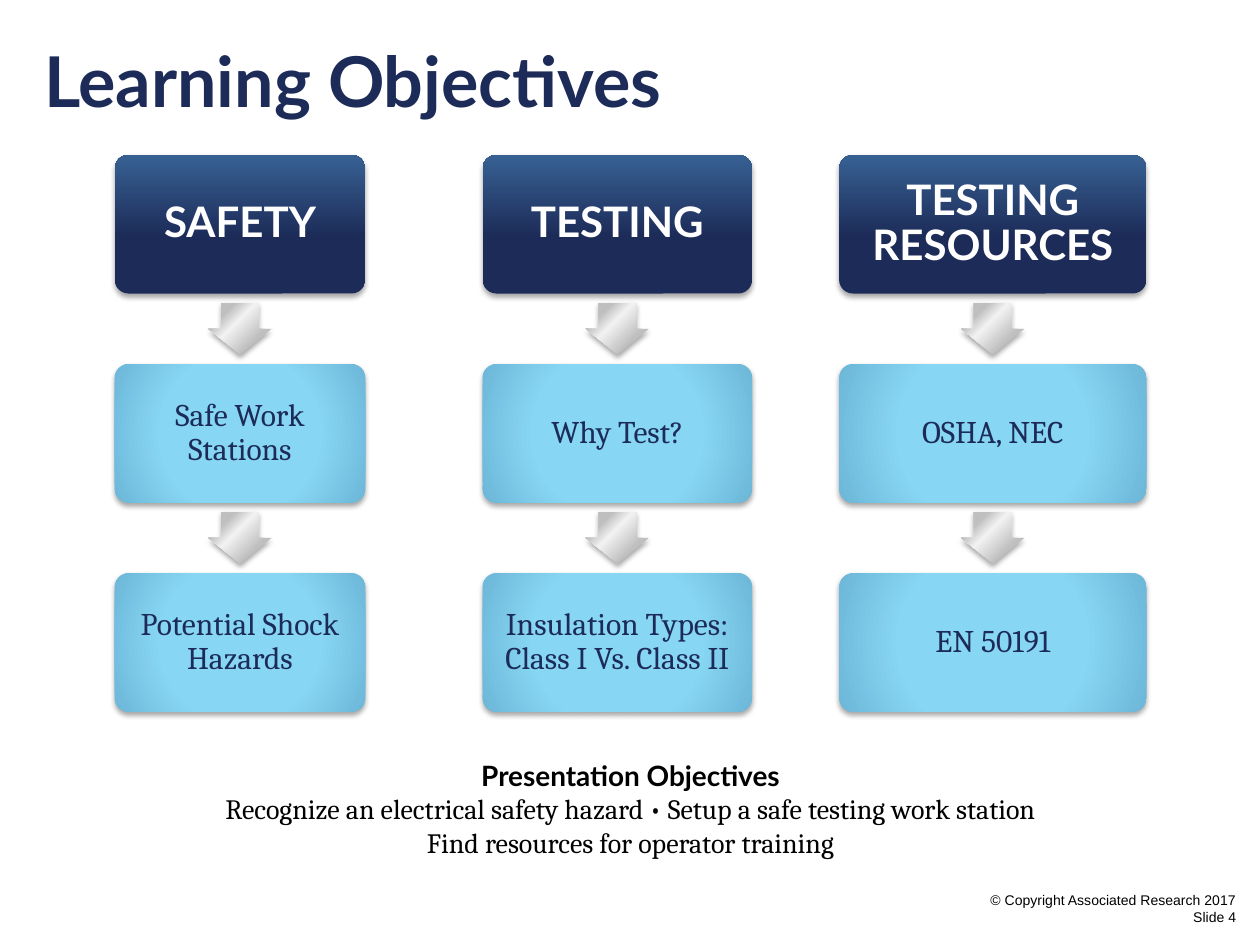
import pptx
import pptx.dml.color
import pptx.enum.shapes
import pptx.enum.text
import pptx.oxml
import pptx.oxml.ns
import pptx.util

Inches = pptx.util.Inches
Pt = pptx.util.Pt
Shape = pptx.enum.shapes.MSO_SHAPE
Align = pptx.enum.text.PP_ALIGN
Anchor = pptx.enum.text.MSO_ANCHOR

NAVY = "1C2B58"
BLACK = "000000"
WHITE = "FFFFFF"

# Gradient stops (percent, colour) and direction
HEADING_STOPS = [(40, NAVY), (99, "376092")]
TOPIC_STOPS = [(55, "87D6F4"), (100, "6CB6D7")]
ARROW_STOPS = [(27, "BFBFBF"), (59, "F2F2F2"), (77, "BFBFBF")]
RADIAL = ('<a:path path="circle"><a:fillToRect l="50000" t="50000" '
          'r="50000" b="50000"/></a:path>')

# Left edge, width and texts of each column, heading first
COLUMNS = [
    (0.91, 1.99, ["SAFETY", "Safe Work Stations", "Potential Shock Hazards"]),
    (3.83, 2.14, ["TESTING", "Why Test?",
                  "Insulation Types:\vClass I Vs. Class II"]),
    (6.66, 2.44, ["TESTING RESOURCES", "OSHA, NEC", "EN 50191"]),
]
TOP = 1.23
BOX_HEIGHT = 1.1
ROW_STEP = 1.66
ARROW_LENGTH, ARROW_WIDTH = 0.41, 0.5


def color(value):
    return pptx.dml.color.RGBColor.from_string(value)


def linear(degrees):
    return f'<a:lin ang="{degrees * 60000}" scaled="0"/>'


def style_paragraph(para, font, size, hex_color, bold=False, align=Align.CENTER):
    para.alignment = align
    para.font.name = font
    para.font.size = Pt(size)
    para.font.bold = bold
    para.font.color.rgb = color(hex_color)


def add_effects(shape, stops, direction):
    """Give a shape a gradient fill, no outline and a soft shadow below."""
    namespace = pptx.oxml.ns.nsdecls("a")
    stop_xml = "".join(
        f'<a:gs pos="{percent * 1000}"><a:srgbClr val="{value}"/></a:gs>'
        for percent, value in stops)
    gradient = pptx.oxml.parse_xml(
        f'<a:gradFill {namespace} rotWithShape="1"><a:gsLst>{stop_xml}</a:gsLst>'
        f'{direction}</a:gradFill>')
    shadow = pptx.oxml.parse_xml(
        f'<a:outerShdw {namespace} blurRad="{Pt(3.1)}" dist="{Pt(1.8)}" '
        'dir="5400000" rotWithShape="0"><a:srgbClr val="000000">'
        '<a:alpha val="35000"/></a:srgbClr></a:outerShdw>')
    shape.line.fill.background()
    shape.shadow.inherit = False
    properties = shape.element.spPr
    properties.find(pptx.oxml.ns.qn("a:prstGeom")).addnext(gradient)
    properties.find(pptx.oxml.ns.qn("a:effectLst")).append(shadow)


def add_box(page, left, top, width, text, heading):
    box = page.shapes.add_shape(Shape.ROUNDED_RECTANGLE, Inches(left), Inches(top),
                                Inches(width), Inches(BOX_HEIGHT))
    box.adjustments[0] = 0.1
    if heading:
        add_effects(box, HEADING_STOPS, linear(270))
    else:
        add_effects(box, TOPIC_STOPS, RADIAL)
    frame = box.text_frame
    frame.word_wrap = True
    frame.vertical_anchor = Anchor.MIDDLE
    inset = Inches(0.1 if heading else 0.07)
    frame.margin_left = frame.margin_right = inset
    frame.margin_top = frame.margin_bottom = inset
    para = frame.paragraphs[0]
    para.text = text
    para.line_spacing = 0.9
    if heading:
        style_paragraph(para, "Lato", 24, WHITE, bold=True)
    else:
        style_paragraph(para, "Cambria", 18, NAVY)


def add_arrow(page, center_x, center_y):
    arrow = page.shapes.add_shape(
        Shape.RIGHT_ARROW, Inches(center_x - ARROW_LENGTH / 2),
        Inches(center_y - ARROW_WIDTH / 2), Inches(ARROW_LENGTH), Inches(ARROW_WIDTH))
    arrow.rotation = 90
    arrow.adjustments[0] = 0.6
    arrow.adjustments[1] = 0.5
    add_effects(arrow, ARROW_STOPS, linear(135))


def add_column(page, left, width, texts):
    for row, text in enumerate(texts):
        top = TOP + row * ROW_STEP
        if row:
            gap = ROW_STEP - BOX_HEIGHT
            add_arrow(page, left + width / 2, top - gap / 2)
        add_box(page, left, top, width, text, heading=row == 0)


def add_text(page, left, top, width, height, lines, anchor=Anchor.TOP):
    """Add a text box; each line is its text and its paragraph style."""
    box = page.shapes.add_textbox(Inches(left), Inches(top),
                                  Inches(width), Inches(height))
    frame = box.text_frame
    frame.word_wrap = True
    frame.vertical_anchor = anchor
    for index, (text, style) in enumerate(lines):
        para = frame.add_paragraph() if index else frame.paragraphs[0]
        para.text = text
        style_paragraph(para, *style)


def set_title(page, text):
    title = page.shapes.title
    title.left, title.top = Inches(0.25), Inches(0.25)
    title.width, title.height = Inches(9.58), Inches(0.75)
    frame = title.text_frame
    frame.auto_size = pptx.enum.text.MSO_AUTO_SIZE.NONE
    frame.vertical_anchor = Anchor.TOP
    frame.text = text
    style_paragraph(frame.paragraphs[0], "Lato", 40, NAVY, True, Align.LEFT)


def main():
    deck = pptx.Presentation()
    deck.slide_width, deck.slide_height = Inches(10), Inches(7.5)
    page = deck.slides.add_slide(deck.slide_layouts[5])
    set_title(page, "Learning Objectives")

    # Three columns of topics
    for left, width, texts in COLUMNS:
        add_column(page, left, width, texts)

    # Objectives below the columns
    body = ("Cambria", 16, BLACK)
    add_text(page, 0.92, 5.97, 8.17, 0.91, [
        ("Presentation Objectives", ("Lato", 16, BLACK, True)),
        ("Recognize an electrical safety hazard • Setup a safe testing work station",
         body),
        ("Find resources for operator training", body),
    ])

    # Footer
    footer = ("Arial", 8, BLACK, False, Align.RIGHT)
    add_text(page, 7.58, 7.08, 2.33, 0.26, [
        ("© Copyright Associated Research 2017", footer),
        ("Slide 4", footer),
    ], Anchor.MIDDLE)

    deck.save("out.pptx")


if __name__ == "__main__":
    main()
